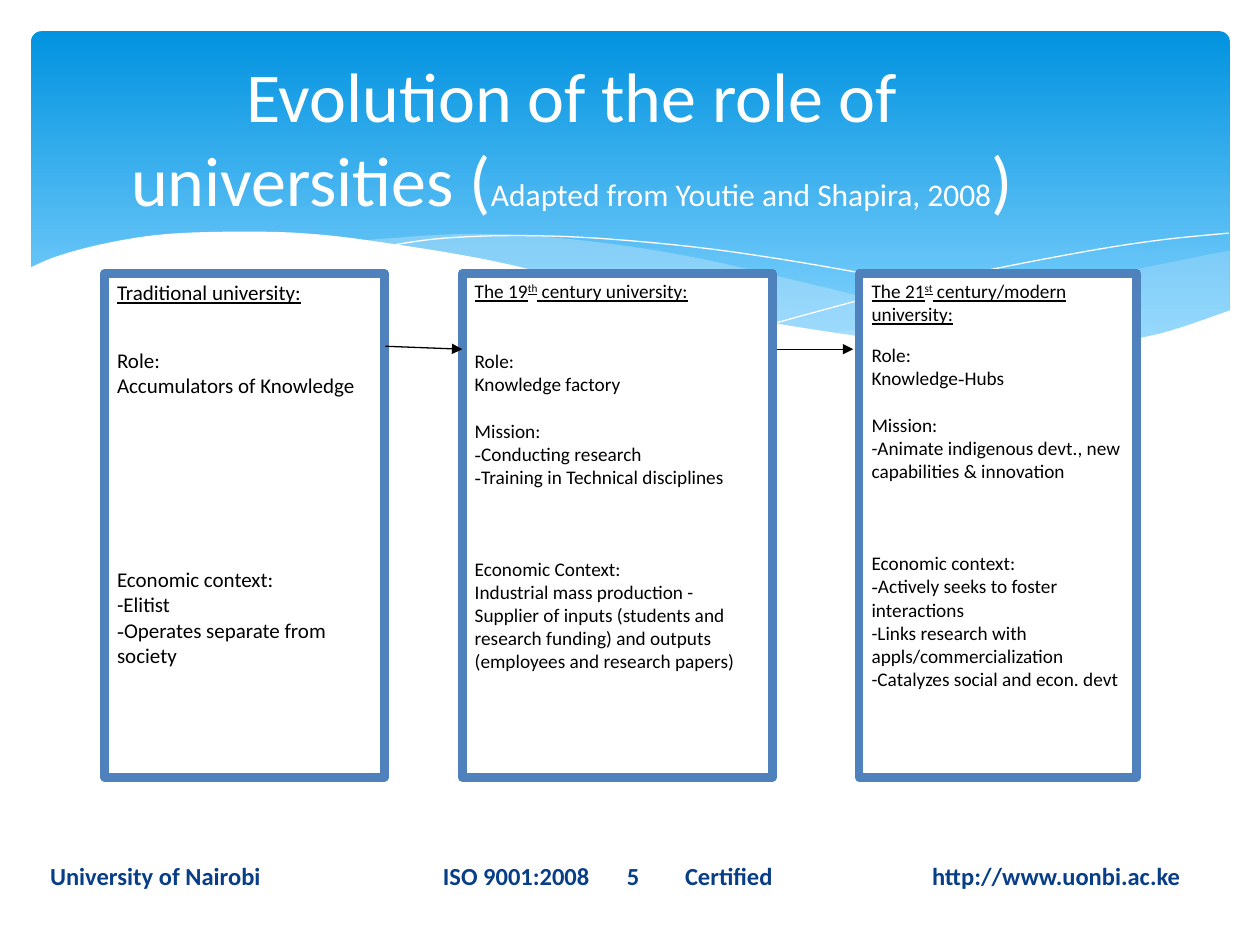
from dataclasses import dataclass

from lxml.etree import SubElement
from pptx import Presentation
from pptx.dml.color import RGBColor
from pptx.enum.shapes import MSO_CONNECTOR as Connector, MSO_SHAPE as Preset
from pptx.enum.text import MSO_ANCHOR as Anchor, MSO_AUTO_SIZE as AutoSize, PP_ALIGN as Align
from pptx.oxml.ns import qn
from pptx.util import Cm, Pt


@dataclass(frozen=True)
class Theme:
    font: str = "Calibri"
    hyphen_font: str = "Times New Roman"
    white: str = "FFFFFF"
    black: str = "000000"
    sky_top: str = "0293E0"
    sky_bottom: str = "83D3FE"
    wave: str = "C6E7FC"
    border: str = "4F81BD"
    footer: str = "073E87"
    title_size: int = 40
    source_size: int = 18
    footer_size: int = 14
    large_size: int = 12
    small_size: int = 11


@dataclass(frozen=True)
class Span:
    text: str
    underline: bool = False
    raised: bool = False
    font: str = Theme.font


def heading(text, raised=False):
    return Span(text, underline=True, raised=raised)


HYPHEN = Span("-", font=Theme.hyphen_font)

# Each paragraph: space before in points, then its spans.
TRADITIONAL = [
    (0, heading("Traditional university:")),
    (24.5, Span("Role:")),
    (0, Span("Accumulators of Knowledge")),
    (96.5, Span("Economic context:")),
    (0, Span("-Elitist")),
    (0, HYPHEN, Span("Operates separate from society")),
]
NINETEENTH = [
    (0, heading("The 19"), heading("th", raised=True), heading(" century university:")),
    (26.5, Span("Role:")),
    (0, Span("Knowledge factory")),
    (13.5, Span("Mission:")),
    (0, HYPHEN, Span("Conducting research")),
    (0, HYPHEN, Span("Training in Technical disciplines")),
    (39.5, Span("Economic Context:")),
    (0, Span("Industrial mass production - Supplier of inputs (students and "
             "research funding) and outputs (employees and research papers)")),
]
MODERN = [
    (0, heading("The 21"), heading("st", raised=True),
     heading(" century/modern university:")),
    (10, Span("Role:")),
    (0, Span("Knowledge"), HYPHEN, Span("Hubs")),
    (13.5, Span("Mission:")),
    (0, Span("-Animate indigenous devt., new capabilities & innovation")),
    (39.5, Span("Economic context:")),
    (0, HYPHEN, Span("Actively seeks to foster interactions")),
    (0, Span("-Links research with appls/commercialization")),
    (0, Span("-Catalyzes social and econ. devt")),
]

# Curve points in centimetres.
RIGHT_WAVE = [
    [(24.79, 5.05), (23.01, 5.41), (21.13, 5.84), (19.13, 6.3), (16.79, 6.73)],
    [(16.79, 6.73), (18.24, 6.91), (19.53, 7.04), (20.68, 7.06), (21.92, 6.99),
     (23.19, 6.78), (24.1, 6.53), (24.79, 6.27)],
]
MIDDLE_WAVE = [
    [(22.68, 6.93), (20.5, 6.6), (17.93, 6.1), (15.98, 5.64), (14.1, 5.21),
     (12.42, 4.93), (10.67, 4.75), (9.17, 4.72), (7.26, 4.85)],
    [(7.26, 4.85), (9.19, 5.16), (11.4, 5.64), (14.38, 6.3), (16.51, 6.71),
     (18.69, 6.99), (20.5, 7.06), (22.68, 6.93)],
]
FALLING_LINE = [[(7.85, 4.95), (8.97, 4.8), (10.57, 4.75), (12.42, 4.83),
                 (14.78, 5.08), (17.65, 5.56), (20.19, 6.12), (23.04, 6.91)]]
RISING_LINE = [[(15.57, 6.53), (17.65, 5.97), (19.71, 5.49), (22, 5.05),
                (23.47, 4.83), (24.77, 4.7)]]
FRONT_WAVE = [
    [(24.82, 6.25), (23.37, 6.73), (21.92, 6.96), (20.55, 7.04), (18.9, 6.96),
     (16.97, 6.73), (14.71, 6.35), (12.07, 5.77), (9.93, 5.26), (8, 4.93),
     (6.35, 4.72), (4.9, 4.67), (3.35, 4.72), (2.16, 4.9), (1.17, 5.16), (0.58, 5.41)],
    [(0.58, 8.36), (24.82, 8.36)],
]


def smooth(points, steps=6):
    """Return a Catmull-Rom curve through the points as short segments."""
    if len(points) < 3:
        return points
    padded = [points[0], *points, points[-1]]
    curve = [points[0]]
    for a, b, c, d in zip(padded, padded[1:], padded[2:], padded[3:]):
        for step in range(1, steps + 1):
            t = step / steps
            curve.append(tuple(
                0.5 * (2 * q + (r - p) * t + (2 * p - 5 * q + 4 * r - s) * t ** 2
                       + (3 * q - p - 3 * r + s) * t ** 3)
                for p, q, r, s in zip(a, b, c, d)))
    return curve


class SlideBuilder:
    def __init__(self, slide, theme):
        self.slide, self.theme = slide, theme
        self.shapes = slide.shapes

    def fill(self, shape, color):
        shape.fill.solid()
        shape.fill.fore_color.rgb = RGBColor.from_string(color)

    def run(self, paragraph, span, size, color, bold=False):
        run = paragraph.add_run()
        run.text = span.text
        font = run.font
        font.name, font.size, font.bold = span.font, Pt(size), bold
        font.underline = span.underline
        font.color.rgb = RGBColor.from_string(color)
        if span.raised:
            run._r.get_or_add_rPr().set("baseline", "30000")

    def sky(self):
        shape = self.shapes.add_shape(Preset.ROUNDED_RECTANGLE,
                                      Cm(0.63), Cm(0.63), Cm(24.16), Cm(6.86))
        shape.adjustments[0] = 0.03
        shape.shadow.inherit = False
        shape.line.fill.background()
        shape.fill.gradient()
        shape.fill.gradient_angle = 270
        stops = zip(shape.fill.gradient_stops, (0, 0.9),
                    (self.theme.sky_top, self.theme.sky_bottom))
        for stop, position, color in stops:
            stop.position = position
            stop.color.rgb = RGBColor.from_string(color)

    def outline(self, curves, closed):
        points = [(Cm(x), Cm(y)) for curve in curves for x, y in smooth(curve)]
        builder = self.shapes.build_freeform(*points[0])
        builder.add_line_segments(points[1:], close=closed)
        shape = builder.convert_to_shape()
        shape.shadow.inherit = False
        return shape

    def wave(self, curves, color, opacity=100):
        shape = self.outline(curves, closed=True)
        shape.line.fill.background()
        self.fill(shape, color)
        if opacity < 100:
            color_element = shape._element.spPr.find(qn("a:solidFill"))[0]
            SubElement(color_element, qn("a:alpha")).set("val", str(opacity * 1000))

    def wave_line(self, curves):
        shape = self.outline(curves, closed=False)
        shape.fill.background()
        shape.line.color.rgb = RGBColor.from_string(self.theme.white)
        shape.line.width = Pt(0)

    def title(self, spans):
        shape = self.shapes.title
        self.shapes._spTree.append(shape._element)  # in front of the waves
        shape.left, shape.top, shape.width, shape.height = Cm(1.47), Cm(0.84), Cm(20.12), Cm(3.81)
        frame = shape.text_frame
        frame.auto_size, frame.vertical_anchor = AutoSize.NONE, Anchor.MIDDLE
        paragraph = frame.paragraphs[0]
        paragraph.alignment = Align.CENTER
        for text, size in spans:
            self.run(paragraph, Span(text), size, self.theme.white)

    def footer(self, parts, tab_stops):
        shape = self.shapes.add_textbox(Cm(0.76), Cm(17.15), Cm(24.43), Cm(1.02))
        frame = shape.text_frame
        frame.word_wrap, frame.vertical_anchor = True, Anchor.MIDDLE
        paragraph = frame.paragraphs[0]
        tabs = SubElement(paragraph._p.get_or_add_pPr(), qn("a:tabLst"))
        for stop in tab_stops:
            SubElement(tabs, qn("a:tab"), pos=str(Cm(stop)), algn="l")
        self.run(paragraph, Span("\t".join(parts)), self.theme.footer_size,
                 self.theme.footer, bold=True)

    def panel(self, left, width, size, content):
        shape = self.shapes.add_shape(Preset.RECTANGLE, Cm(left), Cm(5.51), Cm(width), Cm(10.16))
        shape.shadow.inherit = False
        self.fill(shape, self.theme.white)
        shape.line.color.rgb = RGBColor.from_string(self.theme.border)
        shape.line.width = Pt(5)
        frame = shape.text_frame
        frame.word_wrap, frame.vertical_anchor = True, Anchor.TOP
        for index, (space, *spans) in enumerate(content):
            paragraph = frame.add_paragraph() if index else frame.paragraphs[0]
            paragraph.alignment = Align.LEFT
            if space:
                paragraph.space_before = Pt(space)
            for span in spans:
                self.run(paragraph, span, size, self.theme.black)

    def arrow(self, *ends):
        connector = self.shapes.add_connector(Connector.STRAIGHT, *map(Cm, ends))
        connector.line.color.rgb = RGBColor.from_string(self.theme.black)
        connector.line.width = Pt(0.75)
        SubElement(connector.line._get_or_add_ln(), qn("a:tailEnd"), type="triangle")
        SubElement(connector._element.spPr, qn("a:effectLst"))


def main():
    presentation = Presentation()
    presentation.slide_width, presentation.slide_height = Cm(25.4), Cm(19.05)
    theme = Theme()
    builder = SlideBuilder(presentation.slides.add_slide(presentation.slide_layouts[5]), theme)
    builder.sky()
    builder.wave(RIGHT_WAVE, theme.wave, opacity=29)
    builder.wave(MIDDLE_WAVE, theme.wave, opacity=40)
    builder.wave_line(FALLING_LINE)
    builder.wave_line(RISING_LINE)
    builder.wave(FRONT_WAVE, theme.white)
    builder.title([("Evolution of the role of universities (", theme.title_size),
                   ("Adapted from Youtie and Shapira, 2008", theme.source_size),
                   (")", theme.title_size)])
    builder.footer(["University of Nairobi", "ISO 9001:2008", "5", "Certified",
                    "http://www.uonbi.ac.ke"], (7.92, 11.63, 12.8, 17.78))
    builder.panel(2.11, 5.64, theme.large_size, TRADITIONAL)
    builder.panel(9.32, 6.25, theme.small_size, NINETEENTH)
    builder.panel(17.32, 5.59, theme.small_size, MODERN)
    builder.arrow(7.77, 6.98, 9.32, 7.04)
    builder.arrow(15.67, 7.04, 17.2, 7.04)
    presentation.save("out.pptx")


if __name__ == "__main__":
    main()
